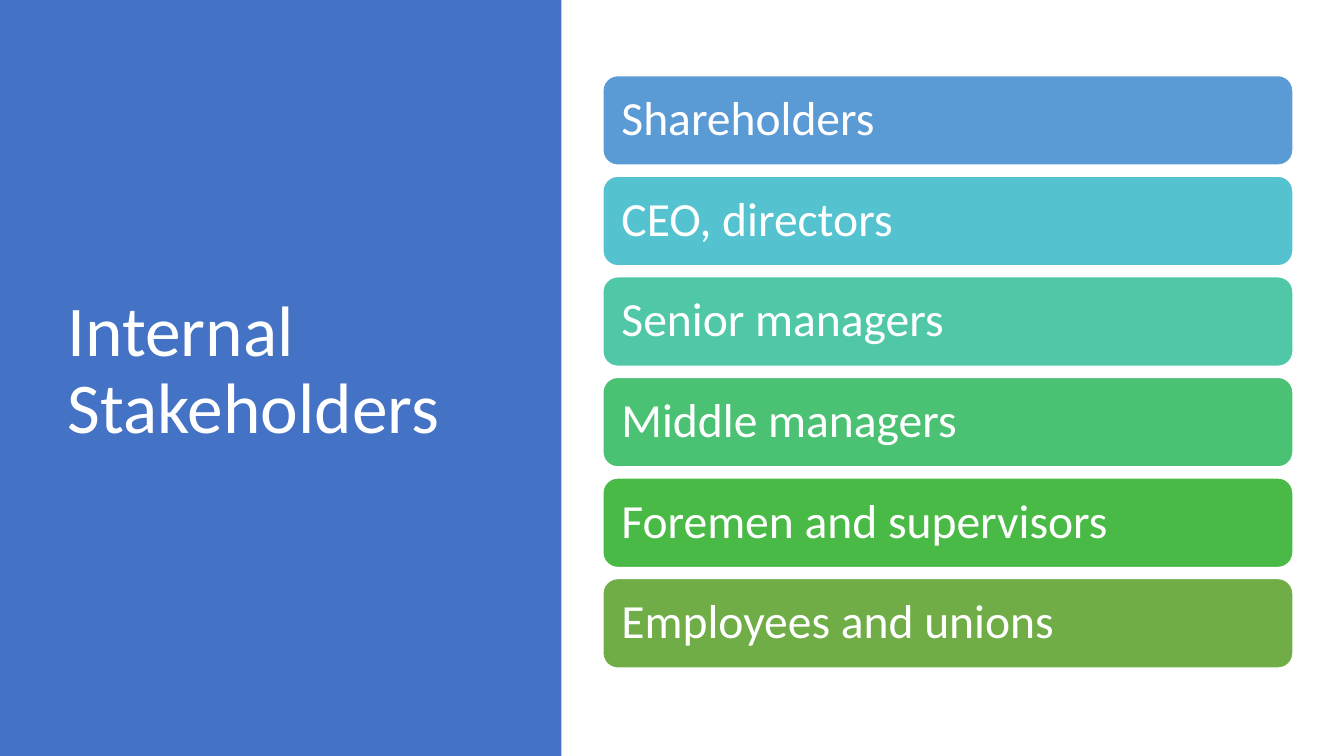
from pptx import Presentation
from pptx.dml.color import RGBColor
from pptx.enum import shapes as sh, text as tx
from pptx.util import Pt

WHITE = RGBColor(0xFF, 0xFF, 0xFF)
BLUE = RGBColor(0x44, 0x72, 0xC4)
SKY = RGBColor(0x5B, 0x9B, 0xD5)
AQUA = RGBColor(0x55, 0xC3, 0xCF)
TEAL = RGBColor(0x50, 0xC8, 0xA7)
MINT = RGBColor(0x4B, 0xC1, 0x74)
GREEN = RGBColor(0x4A, 0xBA, 0x46)
OLIVE = RGBColor(0x70, 0xAD, 0x47)

GROUPS = [
    ("Shareholders", SKY),
    ("CEO, directors", AQUA),
    ("Senior managers", TEAL),
    ("Middle managers", MINT),
    ("Foremen and supervisors", GREEN),
    ("Employees and unions", OLIVE),
]
TOP, STEP = 54, 71.85


def apply(item, values):
    for name, value in values.items():
        setattr(item, name, value)


def place(shape, left, top, width, height):
    apply(shape, {"left": Pt(left), "top": Pt(top),
                  "width": Pt(width), "height": Pt(height)})


def write(shape, words, size, inset):
    frame = shape.text_frame
    frame.text = words
    apply(frame, {"word_wrap": True, "auto_size": tx.MSO_AUTO_SIZE.NONE,
                  "vertical_anchor": tx.MSO_ANCHOR.MIDDLE,
                  "margin_left": Pt(inset), "margin_right": Pt(inset)})
    para = frame.paragraphs[0]
    apply(para, {"alignment": tx.PP_ALIGN.LEFT, "line_spacing": 0.9})
    run = para.runs[0]
    apply(run.font, {"name": "Calibri", "size": Pt(size)})
    run.font.color.rgb = WHITE


def block(slide, kind, box, color):
    shape = slide.shapes.add_shape(kind, *map(Pt, box))
    shape.shadow.inherit = False
    shape.fill.solid()
    shape.fill.fore_color.rgb = color
    shape.line.fill.background()
    return shape


def bar(slide, top, words, color):
    shape = block(slide, sh.MSO_SHAPE.ROUNDED_RECTANGLE,
                  (430.6, top, 493, 64), color)
    shape.line.color.rgb = WHITE
    shape.line.width = Pt(1)
    write(shape, words, 34, 10.2)


def main():
    deck = Presentation()
    apply(deck, {"slide_width": Pt(960), "slide_height": Pt(540)})
    slide = deck.slides.add_slide(deck.slide_layouts[5])

    # Title on the side panel
    title = slide.shapes.title
    place(title, 41, 49, 299.5, 433.4)
    write(title, "Internal Stakeholders", 51, 7.2)
    panel = block(slide, sh.MSO_SHAPE.RECTANGLE, (0, 0, 401, 540), BLUE)
    title.element.addprevious(panel.element)

    # One bar for each group of stakeholders
    for row, (words, color) in enumerate(GROUPS):
        bar(slide, TOP + row * STEP, words, color)

    deck.save("out.pptx")


if __name__ == "__main__":
    main()
